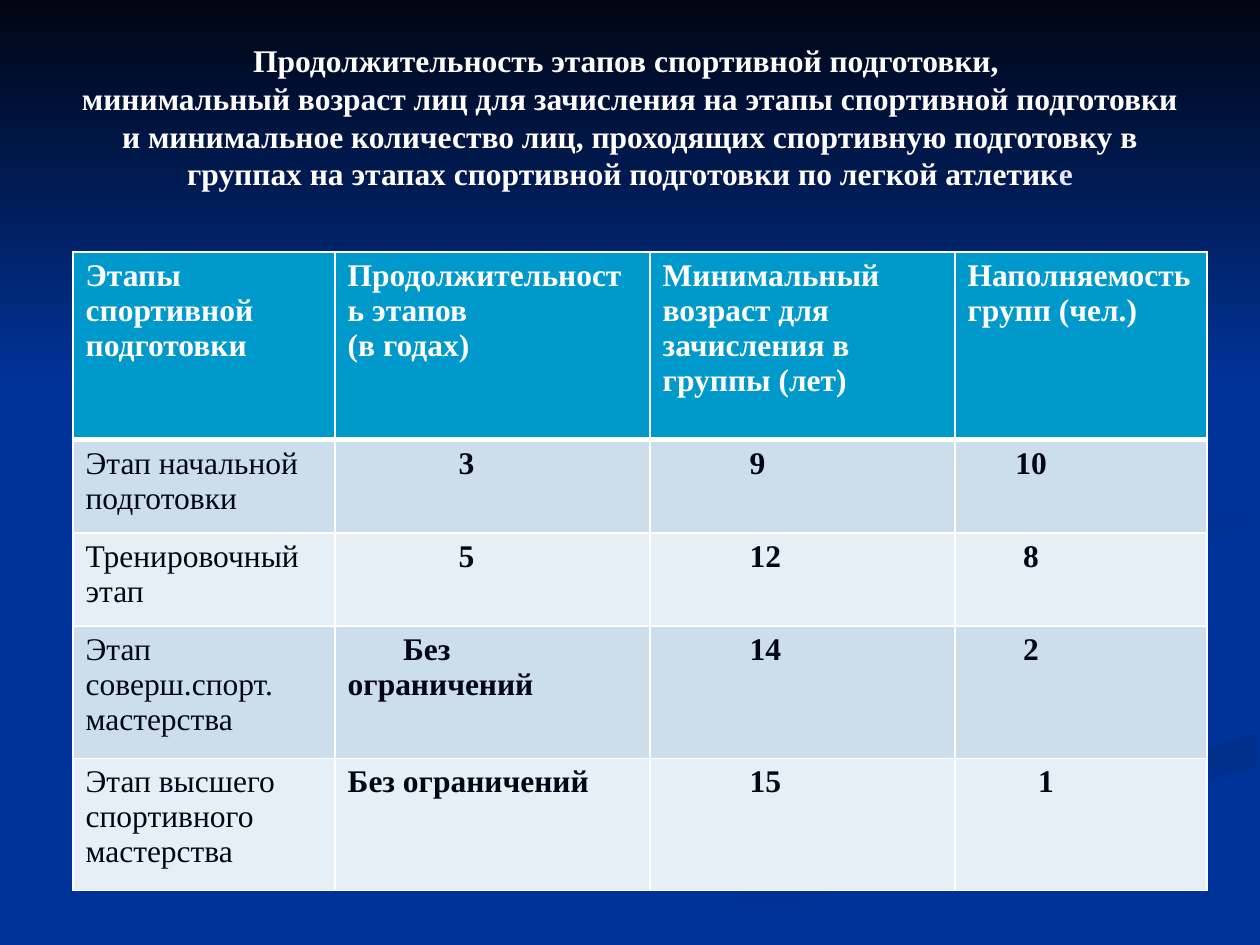
from copy import deepcopy
from pptx import Presentation
from pptx.dml.color import RGBColor
from pptx.enum.text import MSO_ANCHOR as Anchor, MSO_AUTO_SIZE as AutoSize, PP_ALIGN as Align
from pptx.oxml import parse_xml
from pptx.oxml.ns import nsdecls
from pptx.util import Inches, Pt

# Content
TITLE_LINES = (
    "Продолжительность этапов спортивной подготовки, ",
    "минимальный возраст лиц для зачисления на этапы спортивной подготовки "
    "и минимальное количество лиц, проходящих спортивную подготовку в группах "
    "на этапах спортивной подготовки по легкой атлетик",
)
TITLE_LAST_LETTER = "е"
HEADERS = (
    "Этапы спортивной\nподготовки",
    "Продолжительность этапов\n(в годах)",
    "Минимальный\nвозраст для\nзачисления в\nгруппы (лет)",
    "Наполняемость\nгрупп (чел.)",
)
STAGES = (
    ("Этап начальной подготовки", "3", "9", "10"),
    ("Тренировочный этап", "5", "12", "8"),
    ("Этап соверш.спорт. мастерства", "Без ограничений", "14", "2"),
    ("Этап высшего спортивного мастерства", "Без ограничений", "15", "1"),
)
# First-line indents of the values, in inches
INDENTS = ((0.88, 0.69, 0.38), (0.88, 0.69, 0.44), (0.44, 0.69, 0.44), (0, 0.69, 0.56))
COLUMN_WIDTHS = (2.08, 2.5, 2.42, 2)
ROW_HEIGHTS = (1.49, 0.74, 0.74, 1.05, 1.05)
HEADER_FILL, BAND_FILLS = "0099CC", ("CCDEEC", "E7EFF6")
WHITE, DARK, BLUE = "FFFFFF", "000514", "003399"

# Backdrop: start colour, end colour, clockwise angle, outline in 1/100 inch
BACKDROP = (
    ("002F8C", BLUE, 90, (
        (503, 749), (571, 749), (695, 692), (821, 651), (998, 609),
        (998, 581), (936, 602), (764, 647), (630, 693))),
    ("003091", BLUE, 45, (
        (781, 460), (791, 478), (826, 496), (805, 472), (843, 448), (998, 420),
        (998, 402), (849, 427))),
    (DARK, BLUE, 90, ((0, 0), (0, 308), (1000, 308), (1000, 0))),
)


def color(value):
    return RGBColor.from_string(value)


def style_run(run, text_color, bold):
    formats = {"name": "Times New Roman", "size": Pt(18), "bold": bold}
    for attribute, value in formats.items():
        setattr(run.font, attribute, value)
    run.font.color.rgb = color(text_color)


def add_backdrop_shape(slide, start_color, end_color, angle, points):
    builder = slide.shapes.build_freeform(*points[0], scale=Inches(0.01))
    builder.add_line_segments(points[1:], close=True)
    shape = builder.convert_to_shape()
    shape.shadow.inherit = False
    shape.line.fill.background()
    shape.fill.gradient()
    shape.fill.gradient_angle = 360 - angle
    for stop, value in zip(shape.fill.gradient_stops, (start_color, end_color)):
        stop.color.rgb = color(value)


def set_borders(cell, bottom_width):
    properties = cell._tc.get_or_add_tcPr()
    widths = {"lnL": 1, "lnR": 1, "lnT": 1, "lnB": bottom_width}
    for position, (tag, width) in enumerate(widths.items()):
        properties.insert(position, parse_xml(
            f'<a:{tag} {nsdecls("a")} w="{Pt(width)}"><a:solidFill>'
            f'<a:srgbClr val="{WHITE}"/></a:solidFill></a:{tag}>'))


def fill_cell(cell, text, fill, text_color, bold, indent=0, bottom_width=1):
    cell.fill.solid()
    cell.fill.fore_color.rgb = color(fill)
    cell.text = text
    for paragraph in cell.text_frame.paragraphs:
        if indent:
            paragraph._p.get_or_add_pPr().set("indent", str(Inches(indent)))
        for run in paragraph.runs:
            style_run(run, text_color, bold)
    set_borders(cell, bottom_width)


def add_title(slide):
    title = slide.shapes.title
    box = {"left": 0.5, "top": 0.3, "width": 9, "height": 1.25}
    for attribute, value in box.items():
        setattr(title, attribute, Inches(value))
    frame = title.text_frame
    frame.auto_size, frame.vertical_anchor = AutoSize.NONE, Anchor.MIDDLE
    paragraph = frame.paragraphs[0]
    paragraph.alignment = Align.CENTER
    paragraph.text = "\v".join(TITLE_LINES)
    for run in paragraph.runs:
        style_run(run, WHITE, True)
    # The line break takes the text size of its neighbours
    for line_break in paragraph._p.findall("{*}br"):
        line_break.append(deepcopy(paragraph.runs[0]._r.rPr))
    last_letter = paragraph.add_run()
    last_letter.text = TITLE_LAST_LETTER
    style_run(last_letter, "E5E5FF", True)


def add_stage_table(slide):
    table = slide.shapes.add_table(
        len(ROW_HEIGHTS), len(COLUMN_WIDTHS), Inches(0.58), Inches(2),
        Inches(sum(COLUMN_WIDTHS)), Inches(sum(ROW_HEIGHTS))).table
    for column, width in zip(table.columns, COLUMN_WIDTHS):
        column.width = Inches(width)
    for row, height in zip(table.rows, ROW_HEIGHTS):
        row.height = Inches(height)
    for column, text in enumerate(HEADERS):
        fill_cell(table.cell(0, column), text, HEADER_FILL, WHITE, True, bottom_width=3)
    for row, (texts, indents) in enumerate(zip(STAGES, INDENTS), start=1):
        fill = BAND_FILLS[(row - 1) % 2]
        for column, (text, indent) in enumerate(zip(texts, (0, *indents))):
            fill_cell(table.cell(row, column), text, fill, DARK, column > 0, indent)


def main():
    presentation = Presentation()
    presentation.slide_width, presentation.slide_height = Inches(10), Inches(7.5)
    slide = presentation.slides.add_slide(presentation.slide_layouts[5])
    slide.background.fill.solid()
    slide.background.fill.fore_color.rgb = color(BLUE)
    # Backdrop goes behind the title
    for backdrop_shape in BACKDROP:
        add_backdrop_shape(slide, *backdrop_shape)
    slide.shapes._spTree.append(slide.shapes.title._element)
    add_title(slide)
    add_stage_table(slide)
    presentation.save("out.pptx")


if __name__ == "__main__":
    main()
